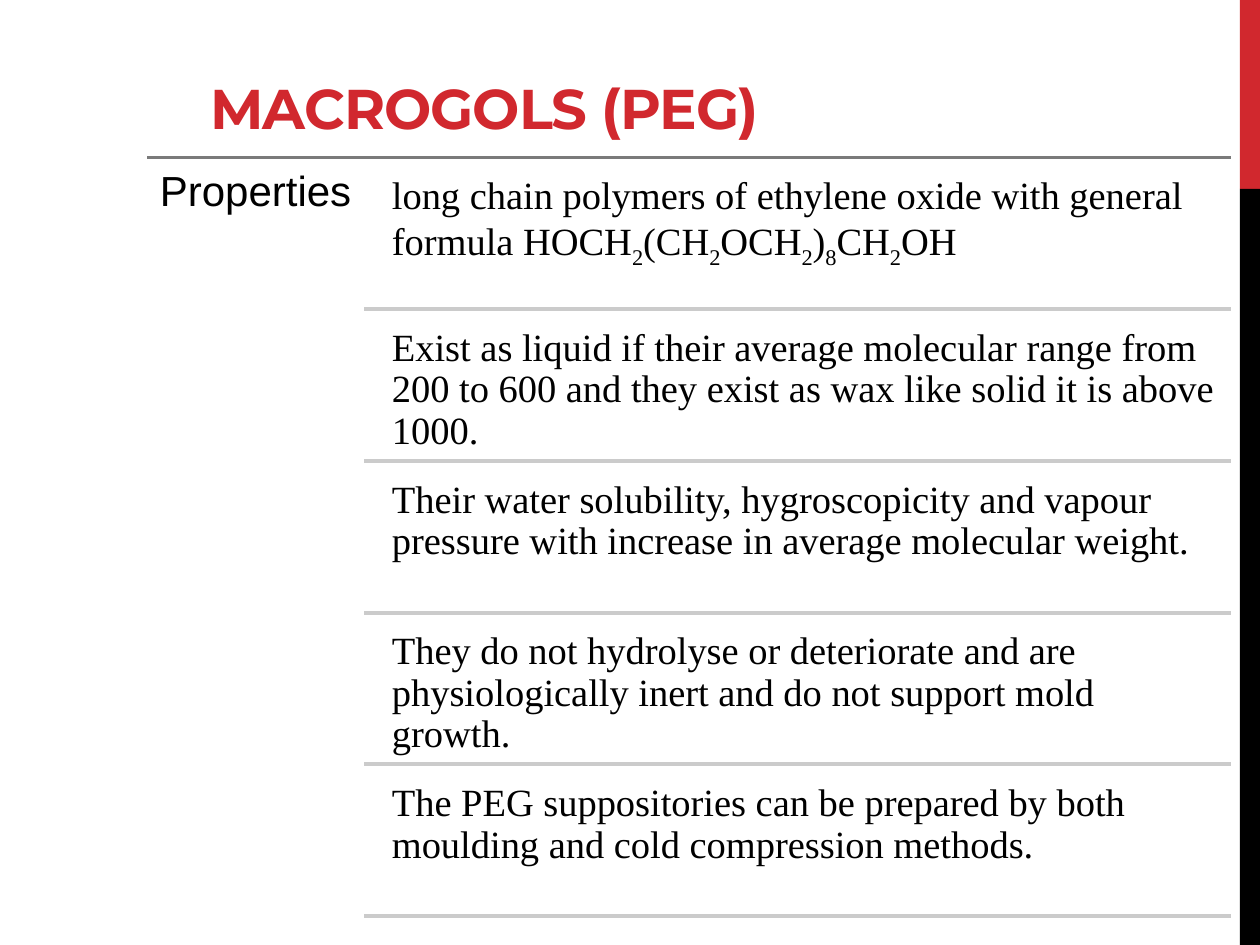
from dataclasses import dataclass
from pptx import Presentation
from pptx.util import Inches, Pt
from pptx.dml.color import RGBColor as RGB
from pptx.enum.shapes import MSO_CONNECTOR, MSO_SHAPE
from pptx.enum.text import MSO_ANCHOR, MSO_AUTO_SIZE, PP_ALIGN
from pptx.oxml.ns import qn


@dataclass
class Theme:
    red: RGB = RGB(0xD1, 0x28, 0x2E)
    black: RGB = RGB(0, 0, 0)
    dark_rule: RGB = RGB(0x7A, 0x7A, 0x7A)
    light_rule: RGB = RGB(0xCB, 0xCB, 0xCB)
    title_font: str = "Montserrat"
    label_font: str = "Arial"
    body_font: str = "Times New Roman"
    title_size: int = 32
    label_size: int = 24
    body_size: int = 22
    rule_width: float = 2.25


theme = Theme()


def add_rule(left, y, color):
    line = s.shapes.add_connector(MSO_CONNECTOR.STRAIGHT, Inches(left), Inches(y),
                                  Inches(right), Inches(y))
    line.line.color.rgb = color
    line.line.width = Pt(theme.rule_width)
    spPr = line._element.spPr
    spPr.append(spPr.makeelement(qn("a:effectLst"), {}))


def add_text(left, top, width, height, inset, runs, font, size):
    """Add a text box; every second run is a subscript."""
    sp = s.shapes.add_textbox(Inches(left), Inches(top), Inches(width), Inches(height))
    tf = sp.text_frame
    tf.word_wrap = True
    tf.margin_left = tf.margin_right = tf.margin_top = tf.margin_bottom = Inches(inset)
    p = tf.paragraphs[0]
    p.line_spacing = 0.9
    for i, text in enumerate(runs):
        r = p.add_run()
        r.text = text
        r.font.name, r.font.size = font, Pt(size)
        r.font.color.rgb = theme.black
        if i % 2:
            r._r.get_or_add_rPr().set("baseline", "-25000")


prs = Presentation()
prs.slide_width, prs.slide_height = Inches(10), Inches(7.5)
s = prs.slides.add_slide(prs.slide_layouts[5])

# Side bars
for top, height, color in [(0, 1.5, theme.red), (1.5, 6, theme.black)]:
    sp = s.shapes.add_shape(MSO_SHAPE.RECTANGLE, Inches(9.84), Inches(top),
                            Inches(0.16), Inches(height))
    sp.shadow.inherit = False
    sp.fill.solid()
    sp.fill.fore_color.rgb = color
    sp.line.fill.background()

# Title
title = s.shapes.title
title.left, title.top = Inches(1.57), Inches(0.3)
title.width, title.height = Inches(8.2), Inches(0.87)
tf = title.text_frame
tf.vertical_anchor = MSO_ANCHOR.BOTTOM
tf.auto_size = MSO_AUTO_SIZE.NONE
p = tf.paragraphs[0]
p.alignment = PP_ALIGN.LEFT
r = p.add_run()
r.text = "MACROGOLS (PEG)"
r.font.name, r.font.size, r.font.bold = theme.title_font, Pt(theme.title_size), True
r.font.color.rgb = theme.red
r._r.get_or_add_rPr().set("spc", "-60")

# Heading rule and label
properties = [
    ["long chain polymers of ethylene oxide with general formula HOCH", "2", "(CH", "2",
     "OCH", "2", ")", "8", "CH", "2", "OH"],
    ["Exist as liquid if their average molecular range from 200 to 600 "
     "and they exist as wax like solid it is above 1000."],
    ["Their water solubility, hygroscopicity and vapour pressure "
     "with increase in average molecular weight."],
    ["They do not hydrolyse or deteriorate and are physiologically inert "
     "and do not support mold growth."],
    ["The PEG suppositories can be prepared by both moulding "
     "and cold compression methods."],
]
left, right, top, bottom = 1.17, 9.77, 1.25, 7.27
row_height = (bottom - top) / len(properties)
add_rule(left, top, theme.dark_rule)
add_text(left, top, 1.72, 6.08, 0.1, ["Properties"], theme.label_font, theme.label_size)

# Property rows, each closed by a rule
for i, runs in enumerate(properties):
    y = top + i * row_height
    add_text(3.02, y + 0.06, 6.75, 1.15, 0.09, runs, theme.body_font, theme.body_size)
    add_rule(2.89, y + row_height, theme.light_rule)

prs.save("out.pptx")
